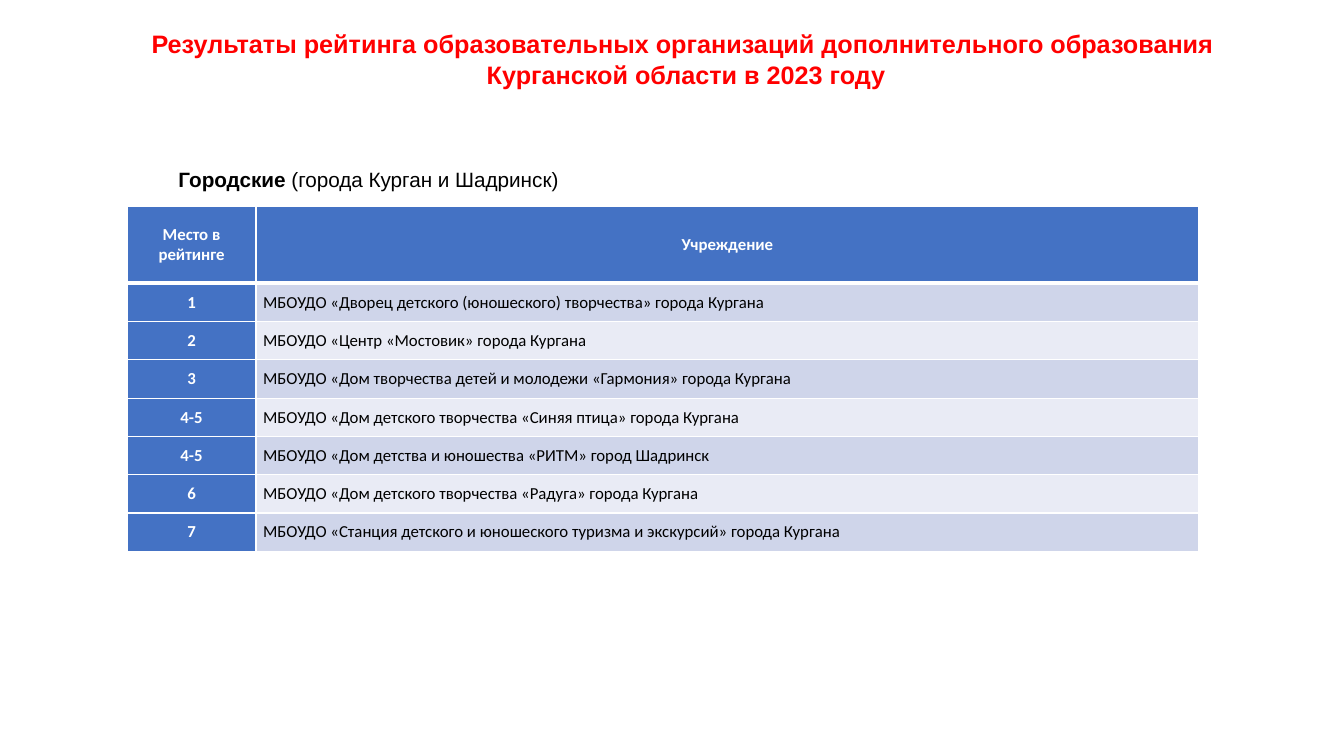
from lxml.etree import SubElement
from pptx import Presentation
from pptx.dml.color import RGBColor
from pptx.enum.text import MSO_ANCHOR as ANCHOR, MSO_AUTO_SIZE as AUTO, PP_ALIGN as ALIGN
from pptx.oxml.ns import qn
from pptx.util import Inches, Pt

WHITE = RGBColor(0xFF, 0xFF, 0xFF)
BLACK = RGBColor(0, 0, 0)
RED = RGBColor(0xFF, 0, 0)
BLUE = RGBColor(0x44, 0x72, 0xC4)
BANDS = RGBColor(0xCF, 0xD5, 0xEA), RGBColor(0xE9, 0xEB, 0xF5)

TITLE = ("Результаты рейтинга образовательных организаций дополнительного образования \v"
         "Курганской области в 2023 году")
HEADER = "Место в рейтинге", "Учреждение"
RATING = [
    ("1", "МБОУДО «Дворец детского (юношеского) творчества» города Кургана"),
    ("2", "МБОУДО «Центр «Мостовик» города Кургана"),
    ("3", "МБОУДО «Дом творчества детей и молодежи «Гармония» города Кургана"),
    ("4-5", "МБОУДО «Дом детского творчества «Синяя птица» города Кургана"),
    ("4-5", "МБОУДО «Дом детства и юношества «РИТМ» город Шадринск"),
    ("6", "МБОУДО «Дом детского творчества «Радуга» города Кургана"),
    ("7", "МБОУДО «Станция детского и юношеского туризма и экскурсий» города Кургана"),
]


def format_text(p, text, size=12, font="Calibri", color=BLACK, bold=False, align=ALIGN.LEFT):
    """Add text to a paragraph with the given format."""
    first = len(p.runs)
    p.alignment = align
    for i, line in enumerate(text.split("\v")):
        if i:
            p.add_line_break()
        p.add_run().text = line
    for r in p.runs[first:]:
        r.font.size, r.font.name, r.font.bold = Pt(size), font, bold
        r.font.color.rgb = color


class RatingSlide:
    """Holds the style and the current slide."""

    def __init__(self, prs):
        """Add a title slide to the presentation."""
        self.font = "Arial"
        self.s = prs.slides.add_slide(prs.slide_layouts[0])

    def placeholder(self, index, runs, box, anchor, spacing, **style):
        """Move a placeholder and fill it with (text, bold) runs."""
        sp = self.s.placeholders[index]
        sp.left, sp.top, sp.width, sp.height = map(Inches, box)
        tf = sp.text_frame
        tf.word_wrap, tf.auto_size, tf.vertical_anchor = True, AUTO.NONE, anchor
        p = tf.paragraphs[0]
        p.space_before, p.line_spacing = Pt(0), spacing
        for text, bold in runs:
            format_text(p, text, font=self.font, bold=bold, align=ALIGN.CENTER, **style)

    def cell(self, cell, text, fill, bottom=1, **style):
        """Fill one cell with text, colour and white borders."""
        tc_pr = cell._tc.get_or_add_tcPr()
        for side, width in zip("LRTB", (1, 1, 1, bottom)):
            ln = SubElement(tc_pr, qn(f"a:ln{side}"), w=str(Pt(width)))
            SubElement(SubElement(ln, qn("a:solidFill")), qn("a:srgbClr"), val=str(WHITE))
        cell.fill.solid()
        cell.fill.fore_color.rgb = fill
        cell.vertical_anchor = ANCHOR.MIDDLE
        cell.margin_left = cell.margin_right = Inches(0.07)
        cell.margin_top = cell.margin_bottom = 0
        format_text(cell.text_frame.paragraphs[0], text, **style)

    def table(self, header, rows, box, widths, row_height):
        """Add the rating table with a double-height header."""
        table = self.s.shapes.add_table(len(rows) + 1, len(header), *map(Inches, box)).table
        for column, width in zip(table.columns, widths):
            column.width = Inches(width)
        for row in table.rows:
            row.height = Inches(row_height)
        table.rows[0].height = Inches(2 * row_height)
        label = dict(color=WHITE, bold=True, align=ALIGN.CENTER)
        for j, text in enumerate(header):
            self.cell(table.cell(0, j), text, BLUE, bottom=3, **label)
        for i, (place, name) in enumerate(rows):
            self.cell(table.cell(i + 1, 0), place, BLUE, bottom=1, **label)
            self.cell(table.cell(i + 1, 1), name, BANDS[i % 2])


def main():
    """Build and save the slide."""
    prs = Presentation()
    prs.slide_width, prs.slide_height = Inches(13.33), Inches(7.5)
    slide = RatingSlide(prs)
    slide.placeholder(0, [(TITLE, True)], (1.14, 0.23, 11.33, 1.31),
                      ANCHOR.TOP, Pt(22), size=18, color=RED)
    slide.placeholder(1, [("Городские", True), (" (города Курган и Шадринск)", False)],
                      (1.26, 1.35, 4.79, 0.6), ANCHOR.BOTTOM, 1.0, size=14.8)
    slide.table(HEADER, RATING, (1.26, 2.05, 10.63, 3.42), (1.28, 9.35), 0.38)
    prs.save("out.pptx")


if __name__ == "__main__":
    main()
